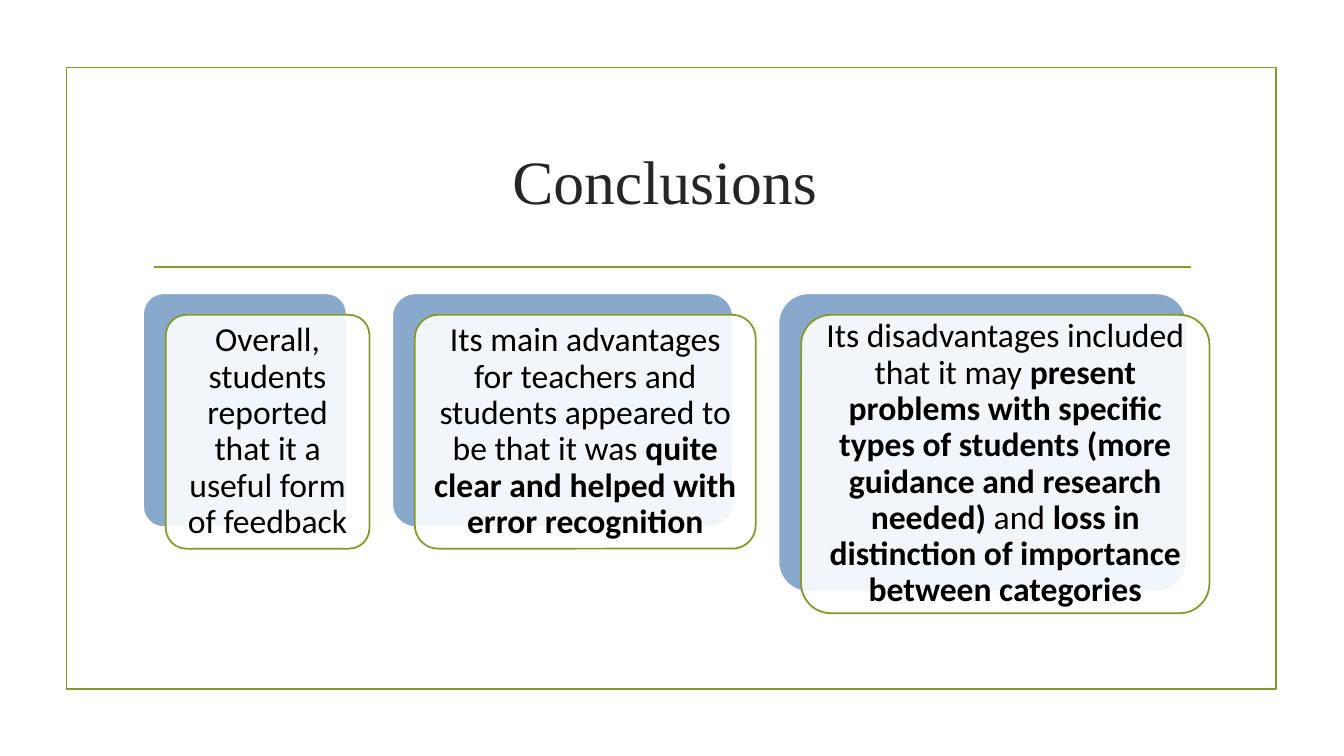
from pptx import Presentation, util as u
from pptx.dml.color import RGBColor
from pptx.enum import shapes, text
from pptx.oxml import parse_xml
from pptx.oxml.ns import nsdecls, qn

deck = Presentation()
deck.slide_width, deck.slide_height = u.Inches(13.33), u.Inches(7.5)
slide = deck.slides.add_slide(deck.slide_layouts[5])
items = slide.shapes
kind = shapes.MSO_SHAPE
green, blue, white = "83992A", "88A9CB", "FFFFFF"


def place(x, y, w, h):
    wide, high = deck.slide_width / 100, deck.slide_height / 100
    return [round(n) for n in (x * wide, y * high, w * wide, h * high)]


def draw(form, box, edge, fill=None):
    item = items.add_shape(form, *place(*box))
    item.shadow.inherit = False
    item.line.color.rgb = RGBColor.from_string(edge)
    item.line.width = u.Pt(1.25)
    if fill:
        item.fill.solid()
        item.fill.fore_color.rgb = RGBColor.from_string(fill)
    else:
        item.fill.background()
    return item


draw(kind.RECTANGLE, (4.95, 8.93, 90, 82.27), green)

x, y, w, h = place(11.48, 35.33, 77.12, 0)
rule = items.add_connector(shapes.MSO_CONNECTOR.STRAIGHT, x, y, x + w, y)
rule.line.color.rgb = RGBColor.from_string(green)
rule.line.width = u.Pt(1.25)
rule._element.spPr.append(parse_xml(f"<a:effectLst {nsdecls('a')}/>"))

title = items.title
title.left, title.top, title.width, title.height = place(10.65, 14.27, 78.77, 19.07)
title.text_frame.text = "Conclusions "
title.text_frame.vertical_anchor = text.MSO_ANCHOR.MIDDLE
head = title.text_frame.paragraphs[0]
head.alignment = text.PP_ALIGN.CENTER
head.font.name, head.font.size = "Times New Roman", u.Pt(44)
head.font.color.rgb = RGBColor.from_string("262626")

cards = [
    (15.15, 30.93, [
        ("Overall, students reported that it a useful form of feedback", False)]),
    (25.36, 30.93, [
        ("Its main advantages for teachers and students appeared to be that it was ", False),
        ("quite clear and helped with error recognition", True)]),
    (30.38, 39.47, [
        ("Its disadvantages included that it may ", False),
        ("present problems with specific types of students "
         "(more guidance and research needed) ", True),
        ("and ", False),
        ("loss in distinction of importance between categories", True)]),
]
left, top = 10.65, 38.8
right, down = 1.69, 2.85

for wide, high, runs in cards:
    back = draw(kind.ROUNDED_RECTANGLE, (left, top, wide, high), white, blue)
    card = draw(kind.ROUNDED_RECTANGLE, (left + right, top + down, wide, high), green, white)
    back.adjustments[0] = card.adjustments[0] = 0.1
    tint = card._element.spPr.find(qn("a:solidFill"))[0]
    tint.append(parse_xml(f'<a:alpha {nsdecls("a")} val="90000"/>'))

    frame = card.text_frame
    frame.word_wrap = True
    frame.vertical_anchor = text.MSO_ANCHOR.MIDDLE
    frame.margin_left = frame.margin_right = u.Inches(0.1)
    frame.margin_top = frame.margin_bottom = u.Inches(0.1)
    para = frame.paragraphs[0]
    para.alignment = text.PP_ALIGN.CENTER
    para.line_spacing = 0.9
    para.font.name, para.font.size = "Calibri", u.Pt(24)
    para.font.color.rgb = RGBColor.from_string("000000")
    for words, bold in runs:
        run = para.add_run()
        run.text = words
        run.font.bold = bold
    left += wide + 2 * right

deck.save("out.pptx")
